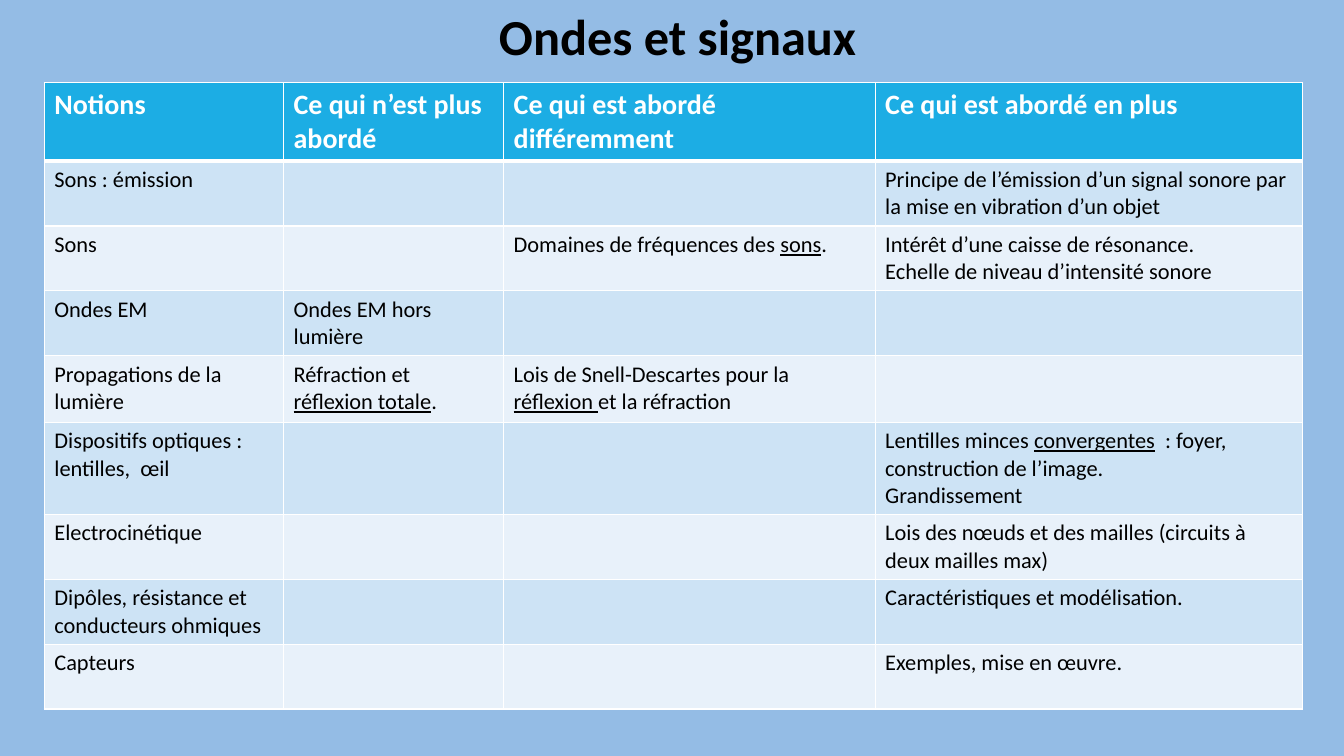
import pptx
import pptx.util
import pptx.dml.color
import pptx.enum.text
import pptx.oxml
import pptx.oxml.ns

WIDE = pptx.util.Inches(13.33)
HIGH = pptx.util.Inches(7.5)
FONT = "Calibri"
SKY, HEAD, WHITE, BLACK = "94BCE5", "1CADE4", "FFFFFF", "000000"
BANDS = ["CDE3F5", "E8F1FA"]
COLS = [2.37, 2.18, 3.68, 4.23]
ROWS = [0.78, 0.64, 0.63, 0.64, 0.66, 0.91, 0.64, 0.64, 0.64]
TEXTS = [
    ["Notions", "Ce qui n’est plus abordé", "Ce qui est abordé différemment",
     "Ce qui est abordé en plus"],
    ["Sons : émission", "", "",
     "Principe de l’émission d’un signal sonore par la mise en vibration d’un objet"],
    ["Sons", "", "Domaines de fréquences des _sons_.",
     "Intérêt d’une caisse de résonance.\nEchelle de niveau d’intensité sonore"],
    ["Ondes EM", "Ondes EM hors lumière", "", ""],
    ["Propagations de la lumière", "Réfraction et _réflexion totale_.",
     "Lois de Snell-Descartes pour la\n_réflexion _et la réfraction", ""],
    ["Dispositifs optiques : lentilles,  œil", "", "",
     "Lentilles minces _convergentes_  : foyer, construction de l’image.\nGrandissement"],
    ["Electrocinétique", "", "",
     "Lois des nœuds et des mailles (circuits à deux mailles max)"],
    ["Dipôles, résistance et conducteurs ohmiques", "", "",
     "Caractéristiques et modélisation."],
    ["Capteurs", "", "", "Exemples, mise en œuvre."],
]


def paint(fill, tone):
    fill.solid()
    fill.fore_color.rgb = pptx.dml.color.RGBColor.from_string(tone)


def write(frame, text, size, tone, bold):
    for row, line in enumerate(text.split("\n")):
        para = frame.add_paragraph() if row else frame.paragraphs[0]
        for turn, part in enumerate(line.split("_")):
            if part:
                run = para.add_run()
                run.text = part
                font = run.font
                font.name, font.size, font.bold = FONT, pptx.util.Pt(size), bold
                font.underline = turn % 2 == 1
                paint(font.fill, tone)


def edge(cell, side, width):
    space = pptx.oxml.ns.nsdecls("a")
    line = pptx.oxml.parse_xml(
        f'<a:ln{side} {space} w="{pptx.util.Pt(width)}"><a:solidFill>'
        f'<a:srgbClr val="{WHITE}"/></a:solidFill></a:ln{side}>')
    cell._tc.get_or_add_tcPr().append(line)


def title(slide, text):
    box = slide.shapes.title
    box.left, box.top, box.width, box.height = 0, 0, WIDE, int(HIGH * 0.095)
    frame = box.text_frame
    frame.word_wrap = True
    frame.auto_size = pptx.enum.text.MSO_AUTO_SIZE.NONE
    frame.vertical_anchor = pptx.enum.text.MSO_ANCHOR.TOP
    write(frame, text, 36, BLACK, True)
    frame.paragraphs[0].alignment = pptx.enum.text.PP_ALIGN.CENTER


def split(lines, parts, total):
    for line, part in zip(lines, parts):
        size = int(total * part / sum(parts))
        if hasattr(line, "width"):
            line.width = size
        else:
            line.height = size


def grid(slide, texts):
    left, top = int(WIDE * 0.033), int(HIGH * 0.109)
    wide, high = int(WIDE * 0.936), int(HIGH * 0.825)
    table = slide.shapes.add_table(
        len(ROWS), len(COLS), left, top, wide, high).table
    split(table.columns, COLS, wide)
    split(table.rows, ROWS, high)
    for row, line in enumerate(texts):
        first = row == 0
        tone = HEAD if first else BANDS[(row - 1) % 2]
        edges = {"L": 1, "R": 1, "T": 3 if row == 1 else 1, "B": 3 if first else 1}
        for col, text in enumerate(line):
            cell = table.cell(row, col)
            for side, width in edges.items():
                edge(cell, side, width)
            paint(cell.fill, tone)
            write(cell.text_frame, text, 20 if first else 16,
                  WHITE if first else BLACK, first)


def main():
    deck = pptx.Presentation()
    deck.slide_width, deck.slide_height = WIDE, HIGH
    slide = deck.slides.add_slide(deck.slide_layouts[5])
    paint(slide.background.fill, SKY)
    title(slide, " Ondes et signaux")
    grid(slide, TEXTS)
    deck.save("out.pptx")


if __name__ == "__main__":
    main()
